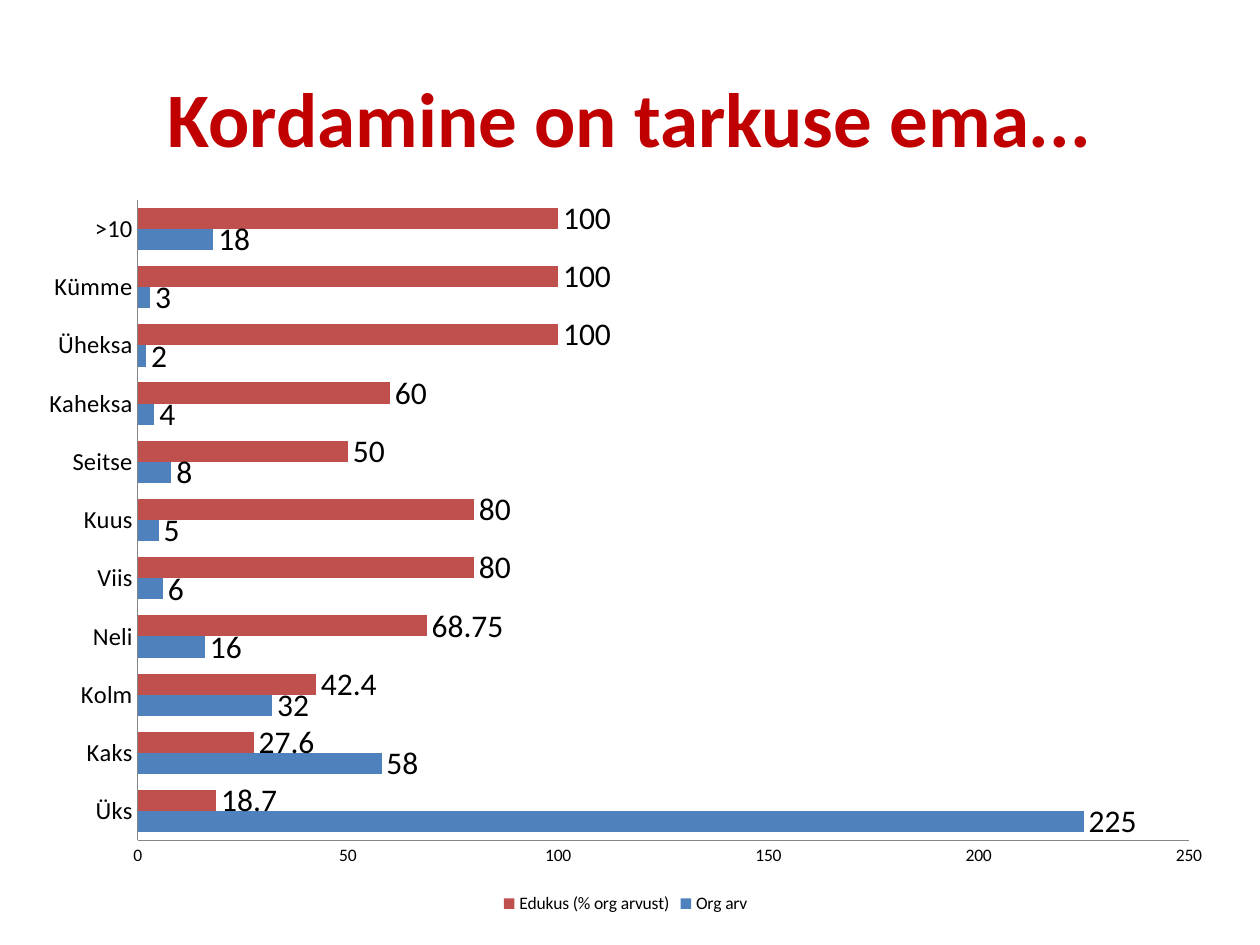
"""Build a slide with a bar chart of success by number of attempts."""
from pptx import Presentation
from pptx.chart.data import CategoryChartData
from pptx.dml.color import RGBColor
from pptx.enum.chart import XL_CHART_TYPE, XL_LABEL_POSITION, XL_LEGEND_POSITION, XL_TICK_MARK
from pptx.enum.text import MSO_ANCHOR, PP_ALIGN
from pptx.util import Pt

BARS = XL_CHART_TYPE.BAR_CLUSTERED
OUTSIDE = XL_LABEL_POSITION.OUTSIDE_END
BOTTOM = XL_LEGEND_POSITION.BOTTOM
NO_TICK = XL_TICK_MARK.NONE
MIDDLE = MSO_ANCHOR.MIDDLE
CENTER = PP_ALIGN.CENTER

RED = RGBColor(0xC0, 0x00, 0x00)
BLACK = RGBColor(0x00, 0x00, 0x00)
GRAY = RGBColor(0x86, 0x86, 0x86)
BLUE = RGBColor(0x4F, 0x81, 0xBD)
BRICK = RGBColor(0xC0, 0x50, 0x4D)
FACE = "Calibri"

TITLE = "Kordamine on tarkuse ema..."
TITLE_BOX = (36, 21.6, 648, 90)
CHART_BOX = (14.4, 105.84, 686.16, 419.04)
COUNTS = ["Üks", "Kaks", "Kolm", "Neli", "Viis", "Kuus", "Seitse",
          "Kaheksa", "Üheksa", "Kümme", ">10"]
SERIES = [
    ("Org arv", BLUE, [225, 58, 32, 16, 6, 5, 8, 4, 2, 3, 18]),
    ("Edukus (% org arvust)", BRICK,
     [18.7, 27.6, 42.4, 68.75, 80, 80, 50, 60, 100, 100, 100]),
]


def set_font(font, size, color=BLACK, bold=False):
    """Apply the common typeface with a size, colour and weight."""
    font.name, font.size, font.bold = FACE, Pt(size), bold
    font.color.rgb = color


def add_title(slide):
    """Place and format the title."""
    title = slide.shapes.title
    title.left, title.top, title.width, title.height = map(Pt, TITLE_BOX)
    frame = title.text_frame
    frame.text = TITLE
    frame.vertical_anchor = MIDDLE
    para = frame.paragraphs[0]
    para.alignment = CENTER
    set_font(para.font, 44, RED, True)


def add_bars(slide):
    """Add the clustered bars with their labels, axes and legend."""
    data = CategoryChartData()
    data.categories = COUNTS
    for name, _, values in SERIES:
        data.add_series(name, values)
    chart = slide.shapes.add_chart(BARS, *map(Pt, CHART_BOX), data).chart
    set_font(chart.font, 10)
    chart.has_title = False
    chart.has_legend = True
    chart.legend.position = BOTTOM
    chart.legend.include_in_layout = False

    for axis, size in ((chart.category_axis, 14), (chart.value_axis, 10)):
        axis.has_major_gridlines = False
        axis.major_tick_mark = axis.minor_tick_mark = NO_TICK
        axis.format.line.color.rgb = GRAY
        axis.format.line.width = Pt(0.75)
        set_font(axis.tick_labels.font, size)
    scale = chart.value_axis
    scale.minimum_scale, scale.maximum_scale, scale.major_unit = 0, 250, 50

    plot = chart.plots[0]
    plot.gap_width, plot.overlap = 75, 0
    plot.vary_by_categories = False
    for series, (_, color, _) in zip(plot.series, SERIES):
        series.format.fill.solid()
        series.format.fill.fore_color.rgb = color
        series.invert_if_negative = False
        labels = series.data_labels
        labels.show_value = True
        labels.position = OUTSIDE
        set_font(labels.font, 18)


def main():
    """Build and save the deck."""
    deck = Presentation()
    deck.slide_width, deck.slide_height = Pt(720), Pt(540)
    slide = deck.slides.add_slide(deck.slide_layouts[5])
    add_title(slide)
    add_bars(slide)
    deck.save("out.pptx")


if __name__ == "__main__":
    main()
